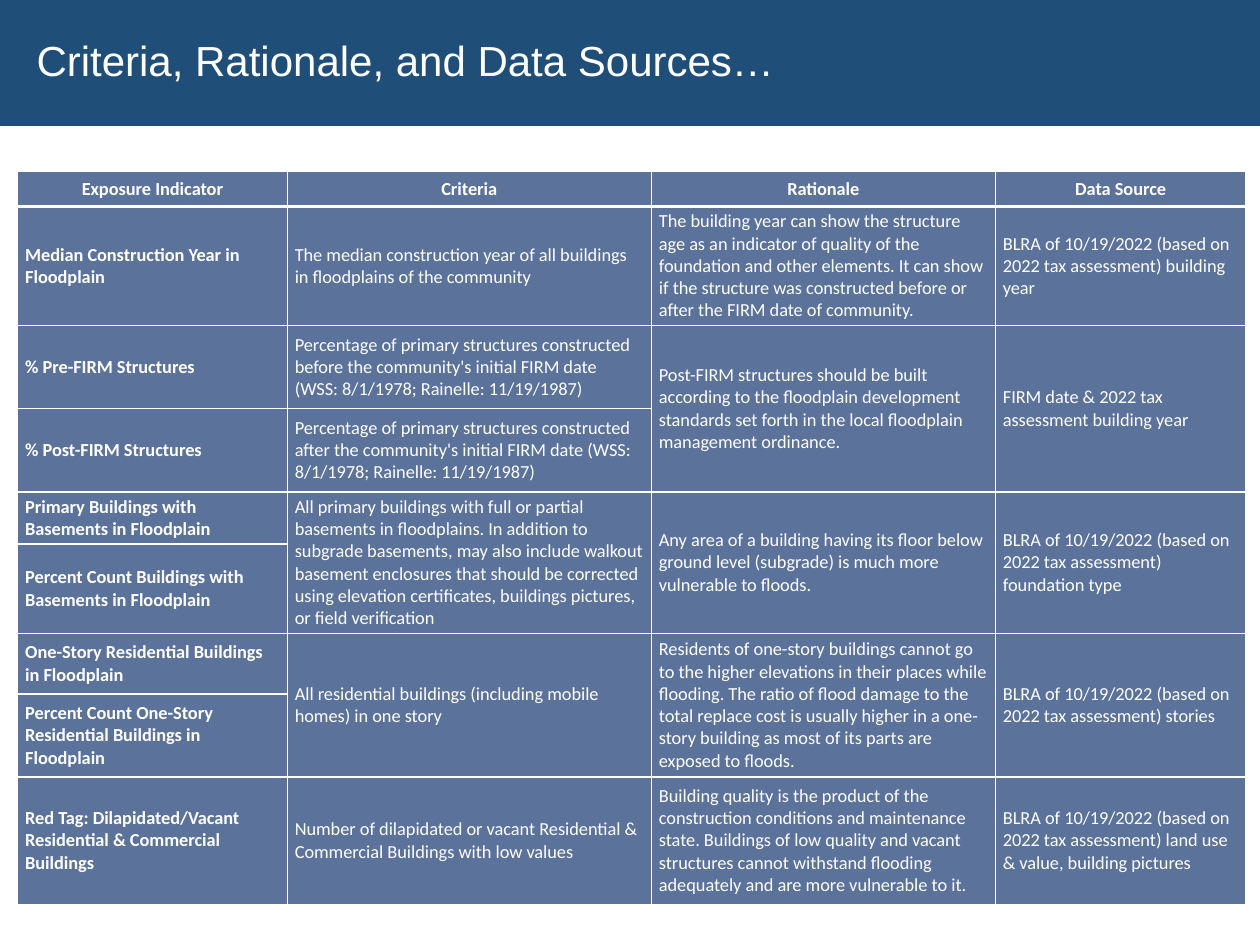
import lxml.etree
import pptx
import pptx.dml.color
import pptx.enum.shapes
import pptx.enum.text
import pptx.oxml.ns
import pptx.util

NAVY = pptx.dml.color.RGBColor(0x1F, 0x4E, 0x79)
SLATE = pptx.dml.color.RGBColor(0x5B, 0x73, 0x9B)
WHITE = pptx.dml.color.RGBColor(0xFF, 0xFF, 0xFF)
Inches = pptx.util.Inches
Pt = pptx.util.Pt
MIDDLE = pptx.enum.text.MSO_ANCHOR.MIDDLE
LEFT = pptx.enum.text.PP_ALIGN.LEFT
CENTER = pptx.enum.text.PP_ALIGN.CENTER

COLUMNS = [2.14, 2.89, 2.73, 1.99]
ROWS = [0.28, 0.94, 0.66, 0.66, 0.41, 0.71, 0.48, 0.66, 1.01]

# None continues the cell above it.
TEXTS = [
    ["Exposure Indicator", "Criteria", "Rationale", "Data Source"],
    ["Median Construction Year in Floodplain",
     "The median construction year of all buildings in floodplains of the community",
     "The building year can show the structure age as an indicator of quality of the "
     "foundation and other elements. It can show if the structure was constructed "
     "before or after the FIRM date of community.",
     "BLRA of 10/19/2022 (based on 2022 tax assessment) building year"],
    ["% Pre-FIRM Structures",
     "Percentage of primary structures constructed before the community's initial "
     "FIRM date (WSS: 8/1/1978; Rainelle: 11/19/1987)",
     "Post-FIRM structures should be built according to the floodplain development "
     "standards set forth in the local floodplain management ordinance.",
     "FIRM date & 2022 tax assessment building year"],
    ["% Post-FIRM Structures",
     "Percentage of primary structures constructed after the community's initial "
     "FIRM date (WSS: 8/1/1978; Rainelle: 11/19/1987)",
     None, None],
    ["Primary Buildings with Basements in Floodplain",
     "All primary buildings with full or partial basements in floodplains. In addition "
     "to subgrade basements, may also include walkout basement enclosures that should "
     "be corrected using elevation certificates, buildings pictures, or field verification",
     "Any area of a building having its floor below ground level (subgrade) is much "
     "more vulnerable to floods.",
     "BLRA of 10/19/2022 (based on 2022 tax assessment) foundation type"],
    ["Percent Count Buildings with Basements in Floodplain", None, None, None],
    ["One-Story Residential Buildings in Floodplain",
     "All residential buildings (including mobile homes) in one story",
     "Residents of one-story buildings cannot go to the higher elevations in their "
     "places while flooding. The ratio of flood damage to the total replace cost is "
     "usually higher in a one-story building as most of its parts are exposed to floods.",
     "BLRA of 10/19/2022 (based on 2022 tax assessment) stories"],
    ["Percent Count One-Story Residential Buildings in Floodplain", None, None, None],
    ["Red Tag: Dilapidated/Vacant Residential & Commercial Buildings",
     "Number of dilapidated or vacant Residential & Commercial Buildings with low values",
     "Building quality is the product of the construction conditions and maintenance "
     "state. Buildings of low quality and vacant structures cannot withstand flooding "
     "adequately and are more vulnerable to it.",
     "BLRA of 10/19/2022 (based on 2022 tax assessment) land use & value, building pictures"],
]


def format_paragraph(p, font_name, size, bold, align):
    p.alignment = align
    for r in p.runs:
        r.font.name = font_name
        r.font.size = Pt(size)
        r.font.bold = bold
        r.font.color.rgb = WHITE


def add_border(cell, side, width):
    """Draw one white edge; side is L, R, T or B. Call before filling the cell."""
    qn = pptx.oxml.ns.qn
    ln = lxml.etree.SubElement(cell._tc.get_or_add_tcPr(), qn("a:ln" + side), w=str(Pt(width)))
    fill = lxml.etree.SubElement(ln, qn("a:solidFill"))
    lxml.etree.SubElement(fill, qn("a:srgbClr"), val=str(WHITE))


prs = pptx.Presentation()
prs.slide_width = Inches(10)
prs.slide_height = Inches(7.5)
s = prs.slides.add_slide(prs.slide_layouts[6])

# Title band
band = s.shapes.add_shape(pptx.enum.shapes.MSO_SHAPE.RECTANGLE, 0, 0, prs.slide_width, Inches(1))
band.shadow.inherit = False
band.fill.solid()
band.fill.fore_color.rgb = NAVY
band.line.fill.background()
tf = band.text_frame
tf.word_wrap = True
tf.vertical_anchor = MIDDLE
tf.margin_left = Inches(0.29)
tf.text = "Criteria, Rationale, and Data Sources…"
tf.paragraphs[0].line_spacing = 0.9
format_paragraph(tf.paragraphs[0], "Arial", 24, False, LEFT)

# Criteria table
table = s.shapes.add_table(len(ROWS), len(COLUMNS), Inches(0.14), Inches(1.36),
                           Inches(sum(COLUMNS)), Inches(sum(ROWS))).table
for column, width in zip(table.columns, COLUMNS):
    column.width = Inches(width)
for row, height in zip(table.rows, ROWS):
    row.height = Inches(height)

for i, texts in enumerate(TEXTS):
    for j, text in enumerate(texts):
        cell = table.cell(i, j)
        for side in "LRTB":
            under_header = (i, side) in [(0, "B"), (1, "T")]
            add_border(cell, side, 2.25 if under_header else 1)
        cell.fill.solid()
        cell.fill.fore_color.rgb = SLATE
        cell.vertical_anchor = MIDDLE
        cell.margin_left = cell.margin_right = Inches(0.06)
        cell.margin_top = cell.margin_bottom = Inches(0.03)
        if text is None:
            table.cell(i - 1, j).merge(cell)
            continue
        cell.text_frame.text = text
        format_paragraph(cell.text_frame.paragraphs[0], "Calibri", 10.5,
                         i == 0 or j == 0, CENTER if i == 0 else LEFT)

prs.save("out.pptx")
